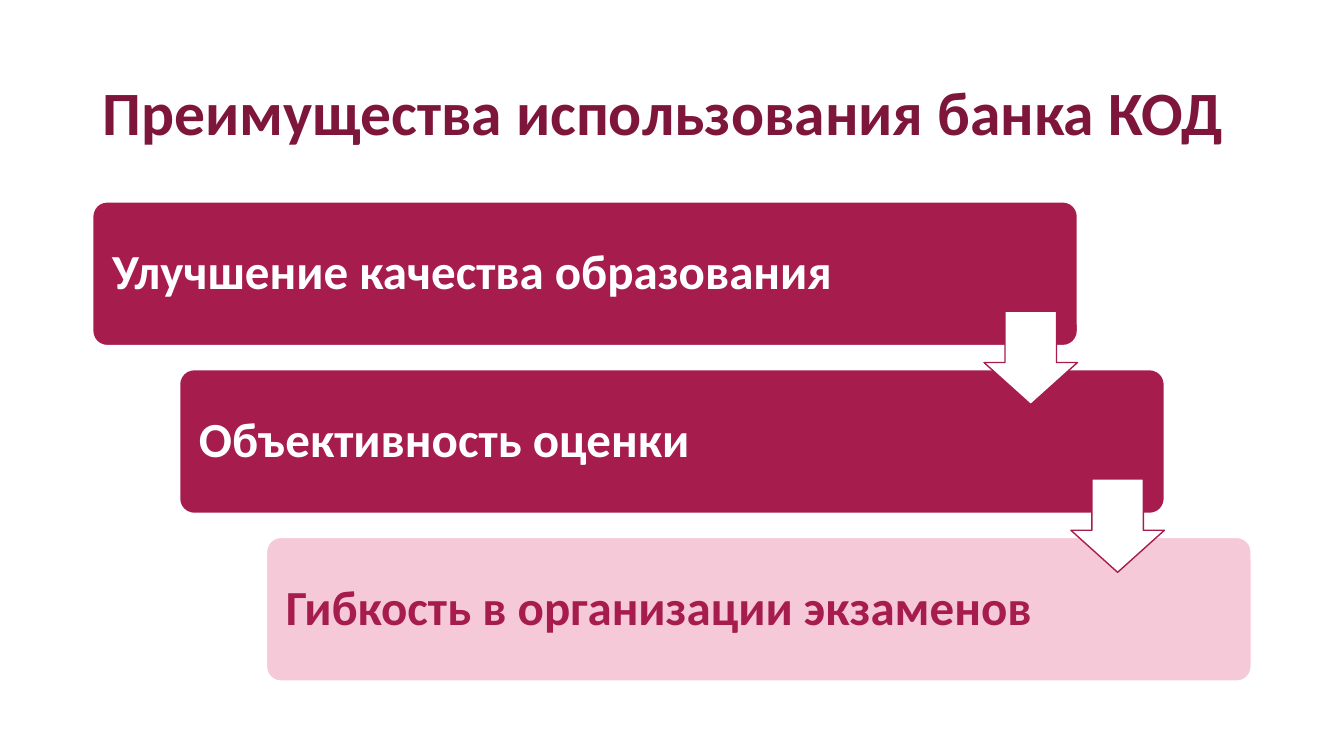
import pptx
import pptx.util
import pptx.dml.color
import pptx.enum.shapes
import pptx.enum.text
from dataclasses import dataclass

Inches = pptx.util.Inches
Shape = pptx.enum.shapes.MSO_SHAPE
Text = pptx.enum.text


@dataclass(frozen=True)
class Theme:
    font: str = "Calibri"
    wine: str = "7D163A"
    rose: str = "A61D4D"
    pale: str = "F6C9D9"
    white: str = "FFFFFF"
    head: int = 44
    body: int = 35
    line: int = 1


theme = Theme()
steps = [
    ("Улучшение качества образования", theme.rose, theme.white),
    ("Объективность оценки", theme.rose, theme.white),
    ("Гибкость в организации экзаменов", theme.pale, theme.rose),
]


def tint(name):
    return pptx.dml.color.RGBColor.from_string(name)


def apply(item, values):
    for name, value in values.items():
        setattr(item, name, value)


def write(frame, text, size, color, inset):
    """Fill a text frame with one bold, left-aligned line."""
    side, top = (Inches(value) for value in inset)
    apply(frame, {
        "text": text, "word_wrap": True,
        "auto_size": Text.MSO_AUTO_SIZE.NONE,
        "vertical_anchor": Text.MSO_ANCHOR.MIDDLE,
        "margin_left": side, "margin_right": side,
        "margin_top": top, "margin_bottom": top,
    })
    line = frame.paragraphs[0]
    apply(line, {"alignment": Text.PP_ALIGN.LEFT, "line_spacing": 0.9})
    font = line.runs[0].font
    apply(font, {"name": theme.font, "size": pptx.util.Pt(size), "bold": True})
    font.color.rgb = tint(color)


def draw(slide, kind, box, fill, edge, adjust):
    """Add a flat preset shape with a thin outline."""
    shape = slide.shapes.add_shape(kind, *map(Inches, box))
    shape.shadow.inherit = False
    shape.fill.solid()
    shape.fill.fore_color.rgb = tint(fill)
    shape.line.color.rgb = tint(edge)
    shape.line.width = pptx.util.Pt(theme.line)
    for index, value in enumerate(adjust):
        shape.adjustments[index] = value
    return shape


def title(slide, box, text):
    holder = slide.shapes.title
    apply(holder, dict(zip(("left", "top", "width", "height"), map(Inches, box))))
    write(holder.text_frame, text, theme.head, theme.wine, (0.1, 0.05))


def stairs(slide, box, items):
    """Set bars in a falling stair, with an arrow from each to the next."""
    left, top, width, height = box
    wide, high = 0.85 * width, 0.3 * height
    right, down = 0.15 * width / (len(items) - 1), 0.7 * height / (len(items) - 1)
    spots = [(left + i * right, top + i * down) for i in range(len(items))]

    # Bars
    for (x, y), (text, fill, color) in zip(spots, items):
        bar = draw(slide, Shape.ROUNDED_RECTANGLE, (x, y, wide, high),
                   fill, theme.white, [0.1])
        write(bar.text_frame, text, theme.body, color, (0.15, 0.15))

    # Arrows
    size = 0.65 * high
    for x, y in spots[:-1]:
        draw(slide, Shape.DOWN_ARROW,
             (x + wide - size, y + 0.76 * high, size, size),
             theme.white, theme.rose, [0.55, 0.45])


def main():
    deck = pptx.Presentation()
    wide, high = 13.33, 7.5
    apply(deck, {"slide_width": Inches(wide), "slide_height": Inches(high)})
    slide = deck.slides.add_slide(deck.slide_layouts[5])
    edge = 0.069 * wide
    span = wide - 2 * edge
    title(slide, (edge, 0.053 * high, span, 0.2 * high),
          "Преимущества использования банка КОД")
    stairs(slide, (edge, 0.267 * high, span, 0.634 * high), steps)
    deck.save("out.pptx")


if __name__ == "__main__":
    main()
